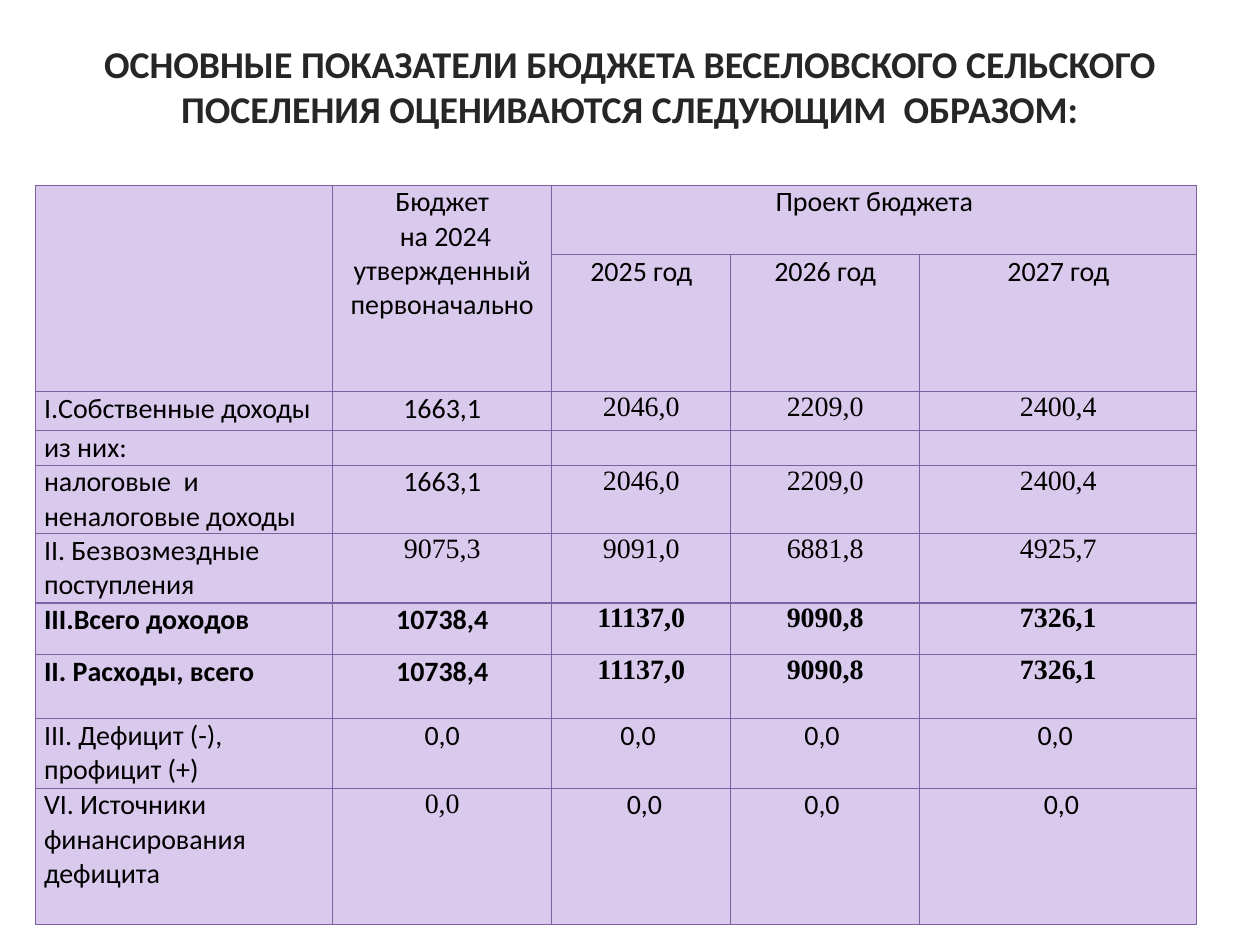
"""Build the slide with the main budget figures of a rural settlement."""
from lxml import etree
from pptx import Presentation
from pptx.dml.color import RGBColor
from pptx.enum.text import MSO_ANCHOR, PP_ALIGN
from pptx.oxml.ns import qn
from pptx.util import Inches, Pt

MIDDLE, TOP = MSO_ANCHOR.MIDDLE, MSO_ANCHOR.TOP
LEFT, CENTER, JUSTIFY = PP_ALIGN.LEFT, PP_ALIGN.CENTER, PP_ALIGN.JUSTIFY
DARK = RGBColor(0x26, 0x26, 0x26)
BLACK = RGBColor(0, 0, 0)
LILAC = RGBColor(0xD9, 0xCA, 0xED)
PURPLE = RGBColor(0x7D, 0x60, 0xA0)
SANS, SERIF = "Calibri", "Times New Roman"

WIDTHS = [2.36, 1.74, 1.42, 1.5, 2.2]
HEIGHTS = [0.55, 1.09, 0.31, 0.27, 0.54, 0.55, 0.41, 0.51, 0.55, 1.08]
ROWS = [
    ["", "Бюджет\n на 2024 утвержденный первоначально", "Проект бюджета", "", ""],
    ["", "", "2025 год", "2026 год", "2027 год"],
    ["I.Собственные доходы", "1663,1", "2046,0", "2209,0", "2400,4"],
    ["из них:", "", "", "", ""],
    ["налоговые  и неналоговые доходы", "1663,1", "2046,0", "2209,0", "2400,4"],
    ["II. Безвозмездные поступления", "9075,3", "9091,0", "6881,8", "4925,7"],
    ["III.Всего доходов", "10738,4", "11137,0", "9090,8", "7326,1"],
    ["II. Расходы, всего", "10738,4", "11137,0", "9090,8", "7326,1"],
    ["III. Дефицит (-), профицит (+)\u00a0", "0,0", "0,0\u00a0", "0,0\u00a0", "0,0\u00a0"],
    ["VI. Источники финансирования дефицита", "0,0", "\u00a00,0", "0,0\u00a0", "\u00a00,0"],
]
BOLD = {6, 7}
ROMAN = {(r, c) for r in (2, 4, 5, 6, 7) for c in (2, 3, 4)} | {(5, 1), (9, 1)}


def add_text(para, text, font, size, color, bold):
    run = para.add_run()
    run.text = text
    run.font.name = font
    run.font.size = Pt(size)
    run.font.color.rgb = color
    run.font.bold = bold


def add_border(cell):
    props = cell._tc.get_or_add_tcPr()
    for side in ("a:lnL", "a:lnR", "a:lnT", "a:lnB"):
        line = etree.SubElement(props, qn(side), w=str(Pt(0.75)))
        fill = etree.SubElement(line, qn("a:solidFill"))
        etree.SubElement(fill, qn("a:srgbClr"), val=str(PURPLE))


prs = Presentation()
prs.slide_width, prs.slide_height = Inches(10), Inches(7.5)
slide = prs.slides.add_slide(prs.slide_layouts[5])

title = slide.shapes.title
title.left, title.top = Inches(0.5), Inches(0.13)
title.width, title.height = Inches(9), Inches(1.42)
frame = title.text_frame
frame.word_wrap = True
frame.vertical_anchor = MIDDLE
frame.margin_bottom = Inches(0.37)
para = frame.paragraphs[0]
para.alignment = CENTER
add_text(para, "ОСНОВНЫЕ ПОКАЗАТЕЛИ БЮДЖЕТА ВЕСЕЛОВСКОГО СЕЛЬСКОГО "
         "ПОСЕЛЕНИЯ ОЦЕНИВАЮТСЯ СЛЕДУЮЩИМ  ОБРАЗОМ:", SANS, 21.6, DARK, True)

table = slide.shapes.add_table(
    len(ROWS), len(WIDTHS), Inches(0.28), Inches(1.47),
    Inches(sum(WIDTHS)), Inches(sum(HEIGHTS))).table
table.first_row = table.horz_banding = False
for col, width in zip(table.columns, WIDTHS):
    col.width = Inches(width)
for row, height in zip(table.rows, HEIGHTS):
    row.height = Inches(height)

for r, row in enumerate(ROWS):
    for c, text in enumerate(row):
        cell = table.cell(r, c)
        add_border(cell)
        cell.fill.solid()
        cell.fill.fore_color.rgb = LILAC
        cell.vertical_anchor = TOP
        cell.margin_left = cell.margin_right = Inches(0.07)
        cell.margin_top = cell.margin_bottom = 0
        font = SERIF if (r, c) in ROMAN else SANS
        for i, part in enumerate(text.split("\n")):
            frame = cell.text_frame
            para = frame.add_paragraph() if i else frame.paragraphs[0]
            para.alignment = CENTER if c else JUSTIFY if r == 2 else LEFT
            if part:
                add_text(para, part, font, 16, BLACK, r in BOLD)
            else:
                etree.SubElement(para._p, qn("a:endParaRPr"), sz="1600")

for start, end in (((0, 0), (1, 0)), ((0, 1), (1, 1)), ((0, 2), (0, 4))):
    table.cell(*start).merge(table.cell(*end))

prs.save("out.pptx")
